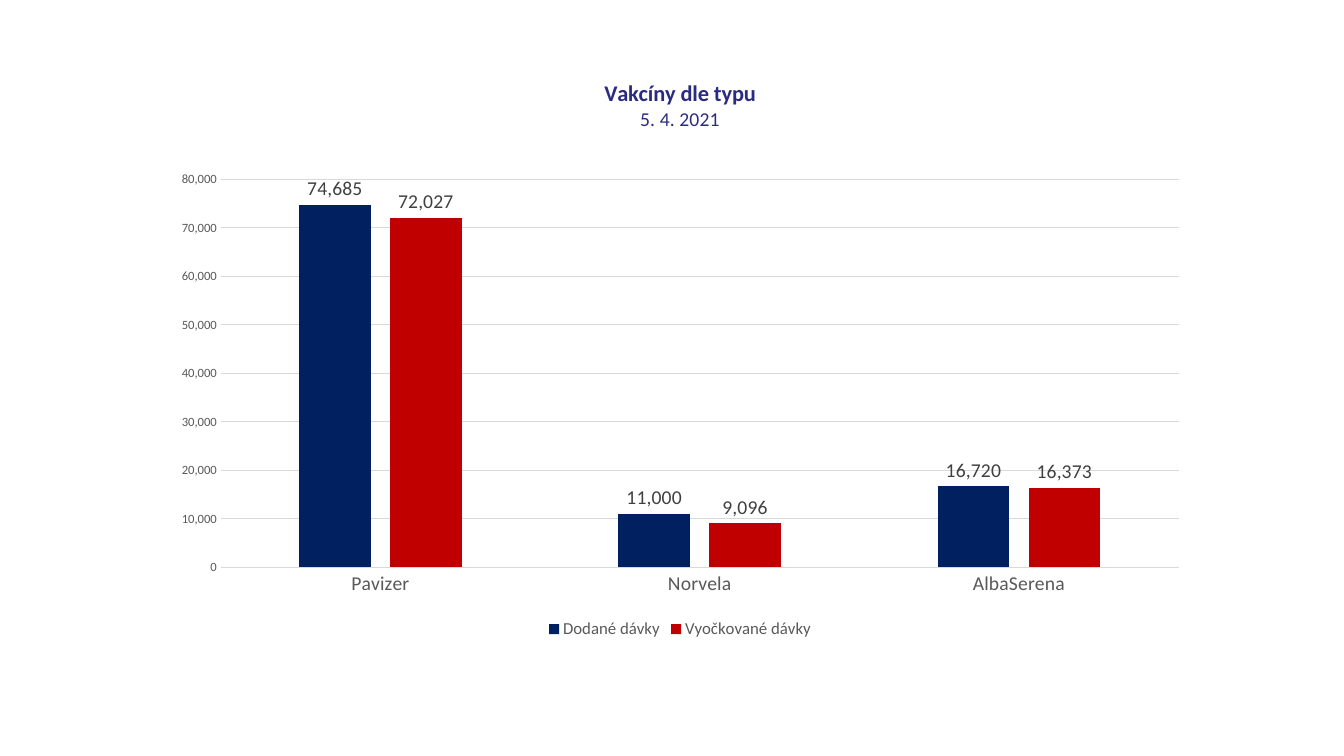
from lxml import etree
from pptx import Presentation
from pptx.chart.data import CategoryChartData as ChartData
from pptx.dml.color import RGBColor
from pptx.enum.chart import XL_CHART_TYPE as Kind
from pptx.enum.chart import XL_LABEL_POSITION as Spot
from pptx.enum.chart import XL_LEGEND_POSITION as Side
from pptx.enum.chart import XL_TICK_MARK as Tick
from pptx.oxml.ns import qn
from pptx.util import Inches, Pt

BLACK = RGBColor(0x00, 0x00, 0x00)
TITLE = RGBColor(0x2B, 0x2B, 0x82)
GREY = RGBColor(0x59, 0x59, 0x59)
DARK = RGBColor(0x40, 0x40, 0x40)
RULE = RGBColor(0xD9, 0xD9, 0xD9)
NAVY = RGBColor(0x00, 0x20, 0x60)
RED = RGBColor(0xC0, 0x00, 0x00)
COUNT = "#,##0"


def style(font, size, color, bold=False):
    font.name = "Calibri"
    font.size = Pt(size)
    font.color.rgb = color
    font.bold = bold


def write(para, text, **form):
    run = para.add_run()
    run.text = text
    style(run.font, **form)


deck = Presentation()
deck.slide_width, deck.slide_height = Inches(13.33), Inches(7.5)
slide = deck.slides.add_slide(deck.slide_layouts[6])

# Doses delivered and given, by vaccine
data = ChartData(number_format=COUNT)
data.categories = ["Pavizer", "Norvela", "AlbaSerena"]
data.add_series("Dodané dávky", [74685, 11000, 16720])
data.add_series("Vyočkované dávky", [72027, 9096, 16373])

left, top, width, height = 1.6, 0.58, 10.29, 5.8
frame = slide.shapes.add_chart(
    Kind.COLUMN_CLUSTERED, Inches(left), Inches(top), Inches(width), Inches(height), data
)
chart = frame.chart
style(chart.font, 10, BLACK)

# Title
chart.has_title = True
head = chart.chart_title.text_frame
write(head.paragraphs[0], "Vakcíny dle typu", size=16, color=TITLE, bold=True)
write(head.add_paragraph(), "5. 4. 2021", size=14, color=TITLE)
chart.chart_title.include_in_layout = False

# Columns and their labels
plot = chart.plots[0]
plot.gap_width = 219
plot.overlap = -27
plot.vary_by_categories = False
for series, color in zip(plot.series, [NAVY, RED]):
    series.format.fill.solid()
    series.format.fill.fore_color.rgb = color
    series.invert_if_negative = False
    labels = series.data_labels
    labels.show_value = True
    labels.position = Spot.OUTSIDE_END
    labels.number_format = COUNT
    labels.number_format_is_linked = False
    style(labels.font, 14, DARK)

# Axes
cats, vals = chart.category_axis, chart.value_axis
for axis, size in [(cats, 14), (vals, 9)]:
    axis.major_tick_mark = axis.minor_tick_mark = Tick.NONE
    style(axis.tick_labels.font, size, GREY)
vals.minimum_scale, vals.maximum_scale, vals.major_unit = 0, 80000, 10000
vals.tick_labels.number_format = COUNT
vals.tick_labels.number_format_is_linked = False
vals.has_major_gridlines = True
vals.format.line.fill.background()
for line in [cats.format.line, vals.major_gridlines.format.line]:
    line.color.rgb = RULE
    line.width = Pt(0.75)

# Legend
chart.has_legend = True
chart.legend.position = Side.BOTTOM
chart.legend.include_in_layout = False
style(chart.legend.font, 12, GREY)

# Plot area, placed as shares of the chart frame
area = chart.element.find(".//" + qn("c:plotArea"))
for old in area.findall(qn("c:layout")):
    area.remove(old)
layout = etree.Element(qn("c:layout"))
manual = etree.SubElement(layout, qn("c:manualLayout"))
for tag, value in [
    ("layoutTarget", "inner"),
    ("xMode", "edge"),
    ("yMode", "edge"),
    ("x", (2.19 - left) / width),
    ("y", (1.78 - top) / height),
    ("w", 9.5 / width),
    ("h", 3.85 / height),
]:
    etree.SubElement(manual, qn("c:" + tag)).set("val", str(value))
area.insert(0, layout)

deck.save("out.pptx")
